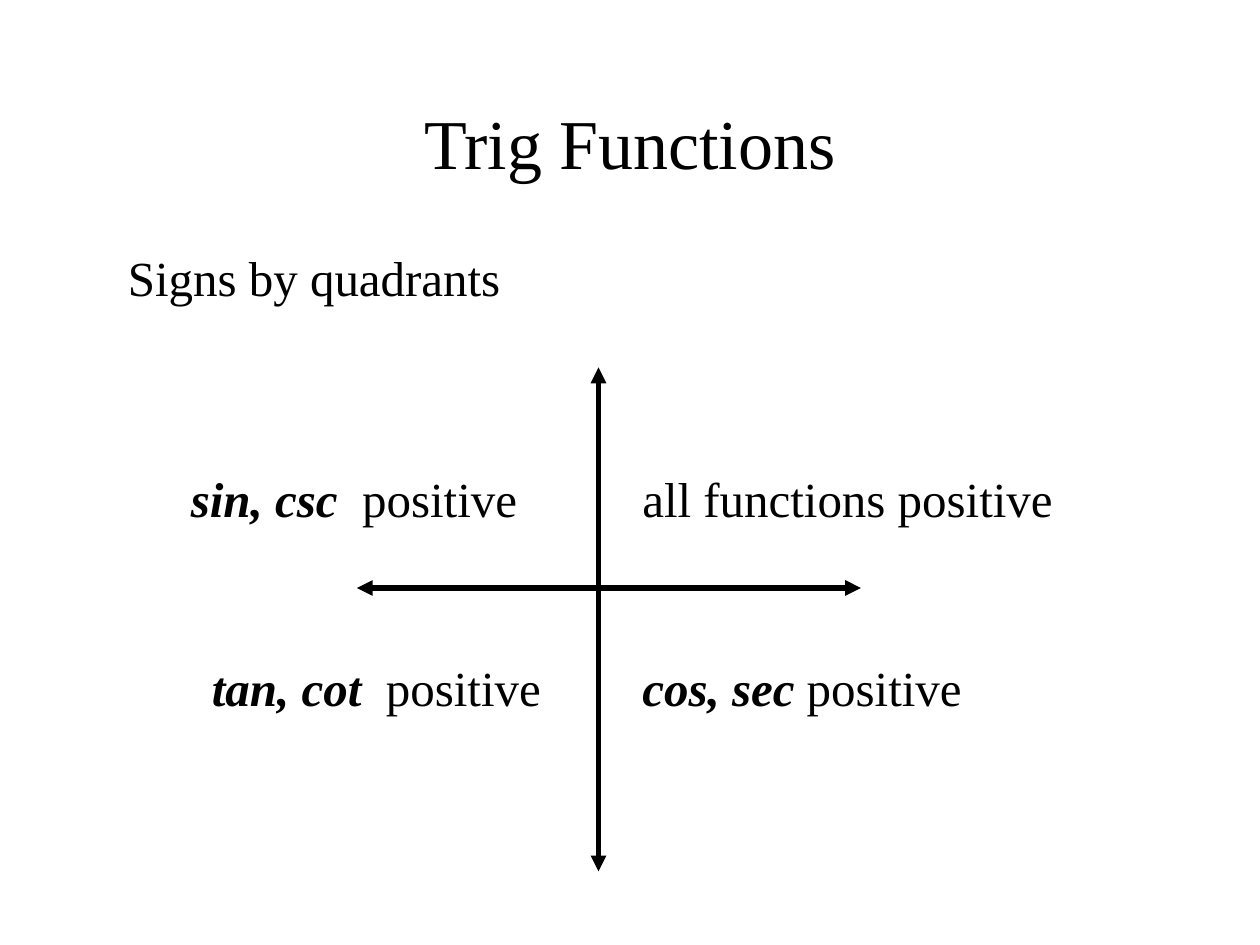
from lxml import etree
from pptx import Presentation
from pptx.dml.color import RGBColor
from pptx.enum.shapes import MSO_CONNECTOR
from pptx.enum.text import MSO_ANCHOR, MSO_AUTO_SIZE, PP_ALIGN
from pptx.oxml.ns import qn
from pptx.util import Pt

LINE = MSO_CONNECTOR.STRAIGHT
TOP, MIDDLE = MSO_ANCHOR.TOP, MSO_ANCHOR.MIDDLE
LEFT, CENTER = PP_ALIGN.LEFT, PP_ALIGN.CENTER
GROW, FIXED = MSO_AUTO_SIZE.SHAPE_TO_FIT_TEXT, MSO_AUTO_SIZE.NONE


def color(code):
    return RGBColor.from_string(code)


def write(par, text, font="Times New Roman", size=28, ink="000000", strong=False):
    """Add a run; strong makes it bold italic."""
    run = par.add_run()
    run.text = text
    run.font.name, run.font.size = font, Pt(size)
    run.font.bold = run.font.italic = strong
    run.font.color.rgb = color(ink)


class Board:
    ink = "000000"
    weight = 3

    def __init__(self, slide):
        self.slide = slide

    def box(self, x, y, w, h, align=LEFT, anchor=TOP, fit=GROW):
        """Add a text box and return its paragraph."""
        frame = self.slide.shapes.add_textbox(Pt(x), Pt(y), Pt(w), Pt(h)).text_frame
        frame.word_wrap = True
        frame.auto_size = fit
        frame.vertical_anchor = anchor
        par = frame.paragraphs[0]
        par.alignment = align
        return par

    def title(self, text):
        par = self.box(54, 36, 612, 90, CENTER, MIDDLE, FIXED)
        write(par, text, size=40, ink=self.ink)

    def label(self, x, y, w, text, names=""):
        par = self.box(x, y, w, 41)
        if names:
            write(par, names, ink=self.ink, strong=True)
        write(par, text, ink=self.ink)

    def axis(self, group, x1, y1, x2, y2):
        axis = group.shapes.add_connector(LINE, Pt(x1), Pt(y1), Pt(x2), Pt(y2))
        axis.line.color.rgb = color(self.ink)
        axis.line.width = Pt(self.weight)
        line = axis.line._get_or_add_ln()
        for end in ("a:headEnd", "a:tailEnd"):
            etree.SubElement(line, qn(end), type="triangle")
        etree.SubElement(axis._element.spPr, qn("a:effectLst"))

    def axes(self, x, top, left, y, size):
        group = self.slide.shapes.add_group_shape()
        self.axis(group, x, top, x, top + size)
        self.axis(group, left, y, left + size, y)


def main():
    deck = Presentation()
    deck.slide_width, deck.slide_height = Pt(720), Pt(540)
    board = Board(deck.slides.add_slide(deck.slide_layouts[6]))

    board.title("Trig Functions")
    board.label(66, 138, 384, "Signs by quadrants")
    board.axes(x=342, top=210, left=204, y=336, size=288)

    upper, lower, right = 264, 372, 360
    board.label(right, upper, 252, "all functions positive")
    board.label(102, upper, 264, "  positive", "sin, csc")
    board.label(114, lower, 264, "  positive", "tan, cot")
    board.label(right, lower, 264, " positive", "cos, sec")
    deck.save("out.pptx")


if __name__ == "__main__":
    main()
